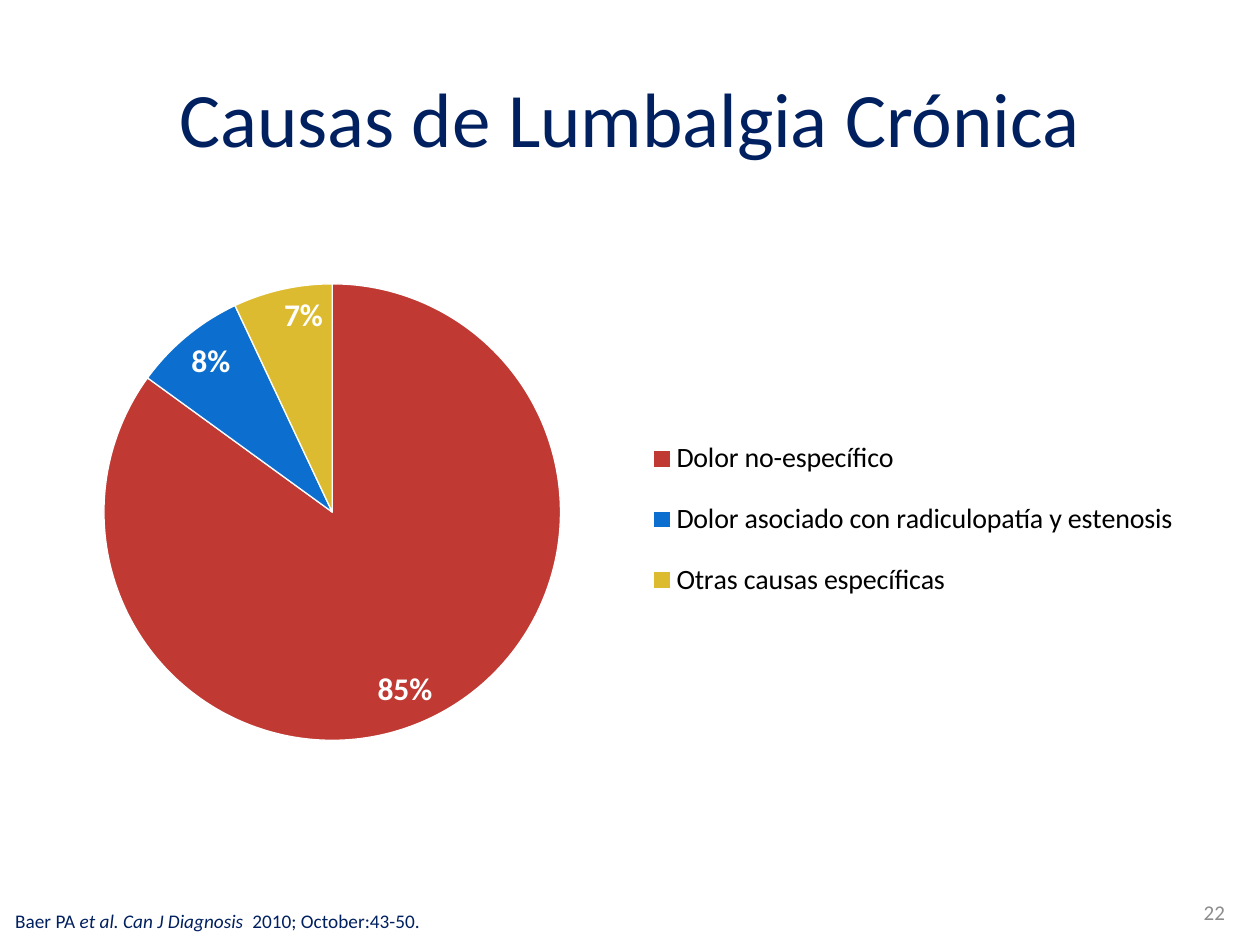
from lxml import etree
from pptx import Presentation
from pptx.chart.data import CategoryChartData
from pptx.dml.color import RGBColor
from pptx.enum import chart as chart_enum, text
from pptx.oxml.ns import qn
from pptx.util import Inches, Pt

FONT = "Calibri"
NAVY, GRAY, WHITE, BLACK = "002060", "8C8C8C", "FFFFFF", "000000"
CAUSES = [
    ("Dolor no-específico", 85, "C03932"),
    ("Dolor asociado con radiculopatía y estenosis", 8, "0C6FCF"),
    ("Otras causas específicas", 7, "DDBB30"),
]


def color(value):
    return RGBColor.from_string(value)


def set_all(target, values):
    for name, value in values.items():
        setattr(target, name, value)


def set_font(font, size, hex_color, **values):
    set_all(font, {"name": FONT, "size": Pt(size), **values})
    font.color.rgb = color(hex_color)


def add_text(slide, box, runs, size, hex_color, frame_values, paragraph_values):
    frame = slide.shapes.add_textbox(*map(Inches, box)).text_frame
    set_all(frame, {"word_wrap": True, **frame_values})
    paragraph = frame.paragraphs[0]
    set_all(paragraph, paragraph_values)
    for words, italic in runs:
        run = paragraph.add_run()
        run.text = words
        set_font(run.font, size, hex_color, italic=italic)


def set_layout(parent, previous, values, inner=False):
    for old in parent.findall(qn("c:layout")):
        parent.remove(old)
    layout = etree.Element(qn("c:layout"))
    manual = etree.SubElement(layout, qn("c:manualLayout"))
    settings = [("layoutTarget", "inner")] if inner else []
    settings += [("xMode", "edge"), ("yMode", "edge"), *zip("xywh", values)]
    for name, value in settings:
        etree.SubElement(manual, qn(f"c:{name}")).set("val", str(value))
    if previous is None:
        parent.insert(0, layout)
    else:
        previous.addnext(layout)


def add_causes_pie(slide, box):
    names, values, fills = zip(*CAUSES)
    data = CategoryChartData()
    data.categories = names
    data.add_series("Series 1", values)
    chart = slide.shapes.add_chart(
        chart_enum.XL_CHART_TYPE.PIE, *map(Inches, box), data
    ).chart
    set_all(chart, {"has_title": False, "has_legend": True})
    set_font(chart.font, 16, BLACK)

    legend = chart.legend
    set_all(legend, {
        "position": chart_enum.XL_LEGEND_POSITION.RIGHT,
        "include_in_layout": False,
    })
    set_font(legend.font, 16, BLACK)

    plot = chart.plots[0]
    set_all(plot, {"vary_by_categories": True, "has_data_labels": True})
    labels = plot.data_labels
    set_all(labels, {
        "show_value": True,
        "show_percentage": False,
        "number_format": '#,##0"%"',
        "number_format_is_linked": False,
        "position": chart_enum.XL_LABEL_POSITION.INSIDE_END,
    })
    set_font(labels.font, 18, WHITE, bold=True)

    for index, fill in enumerate(fills):
        slice_format = plot.series[0].points[index].format
        slice_format.fill.solid()
        slice_format.fill.fore_color.rgb = color(fill)
        slice_format.line.color.rgb = color(WHITE)
        slice_format.line.width = Pt(0.75)

    plot_area = chart.element.find(".//" + qn("c:plotArea"))
    legend_element = chart.element.find(".//" + qn("c:legend"))
    set_layout(plot_area, None, (0.05, 0.176, 0.384, 0.676), inner=True)
    set_layout(legend_element, legend_element.find(qn("c:legendPos")),
               (0.5, 0.37, 0.46, 0.31))


def main():
    presentation = Presentation()
    set_all(presentation, {"slide_width": Inches(10), "slide_height": Inches(7.5)})
    slide = presentation.slides.add_slide(presentation.slide_layouts[6])
    middle = {"vertical_anchor": text.MSO_ANCHOR.MIDDLE}
    citation_frame = {
        "vertical_anchor": text.MSO_ANCHOR.BOTTOM,
        "auto_size": text.MSO_AUTO_SIZE.SHAPE_TO_FIT_TEXT,
        **{f"margin_{side}": 0 for side in ("left", "top", "right", "bottom")},
    }
    citation = [
        ("Baer PA ", False),
        ("et al. Can J Diagnosis  ", True),
        ("2010; October:43-50.", False),
    ]
    add_causes_pie(slide, (0.35, 1.31, 9.45, 5.36))
    add_text(slide, (0.5, 0.3, 9, 1.25), [("Causas de Lumbalgia Crónica", False)],
             44, NAVY, middle, {"alignment": text.PP_ALIGN.CENTER})
    add_text(slide, (7.49, 7.04, 2.33, 0.4), [("22", False)],
             12, GRAY, middle, {"alignment": text.PP_ALIGN.RIGHT})
    add_text(slide, (0.12, 7.21, 9.48, 0.19), citation,
             11, NAVY, citation_frame, {"space_after": Pt(6)})
    presentation.save("out.pptx")


if __name__ == "__main__":
    main()
